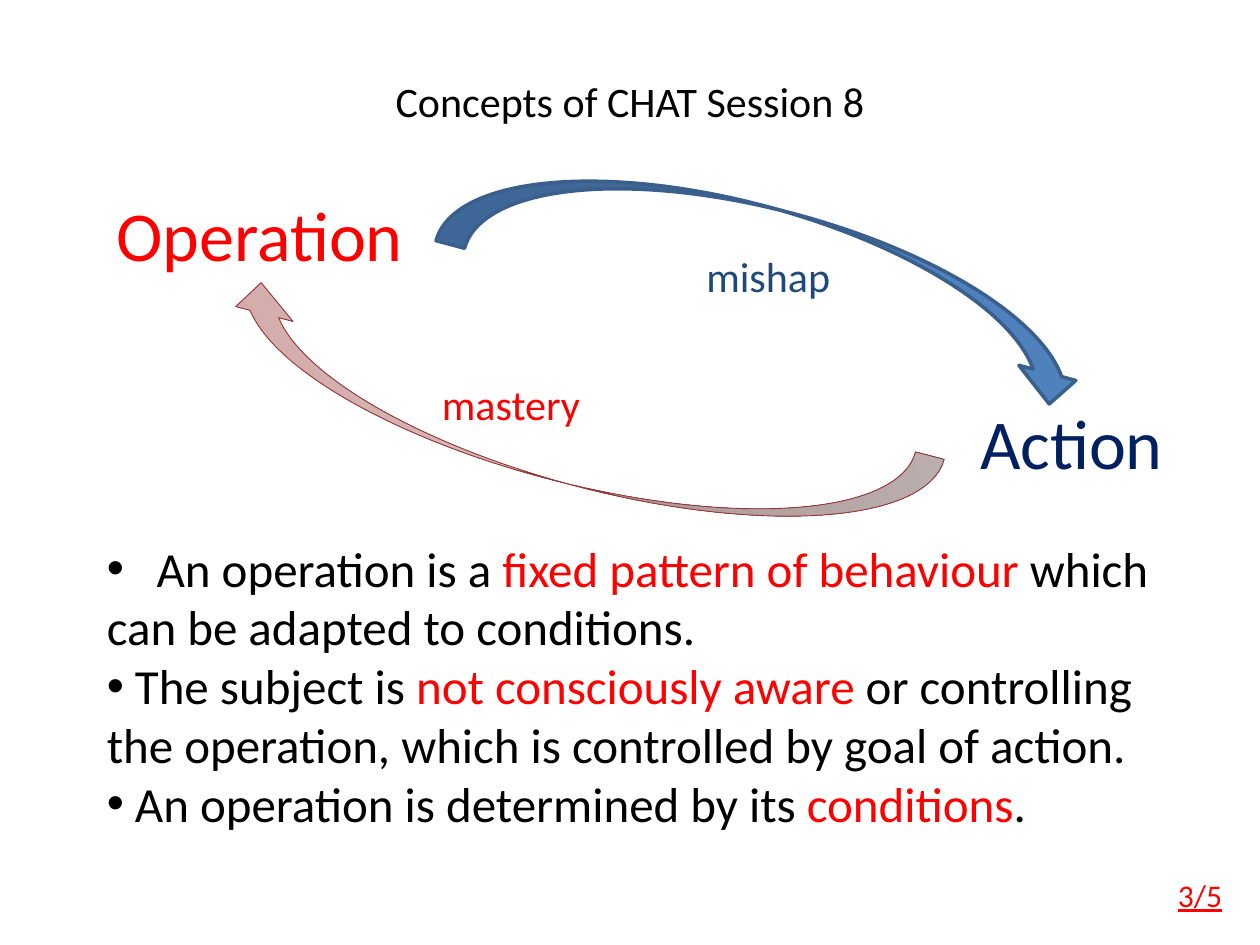
from lxml import etree
from pptx import Presentation
from pptx.dml.color import RGBColor
from pptx.enum.shapes import MSO_SHAPE as Geo
from pptx.enum.text import MSO_ANCHOR as Anchor, MSO_AUTO_SIZE as Auto, PP_ALIGN as Align
from pptx.oxml import parse_xml
from pptx.oxml.ns import nsdecls, qn
from pptx.util import Pt

FONT = "Calibri"
BLACK, RED, NAVY, BLUE = "000000", "FF0000", "002060", "1F497D"

POINTS = [
    [("\tAn operation is a ", BLACK), ("fixed pattern of behaviour", RED),
     (" which can be adapted to conditions.", BLACK)],
    [(" The subject is ", BLACK), ("not consciously aware", RED),
     (" or controlling the operation, which is controlled by goal of action.", BLACK)],
    [(" An operation is determined by its ", BLACK), ("conditions", RED), (".", BLACK)],
]


def color(code):
    return RGBColor.from_string(code)


def add_run(para, text, size, code, under=False):
    run = para.add_run()
    run.text = text
    font = run.font
    font.name, font.size = FONT, Pt(size)
    font.color.rgb = color(code)
    if under:
        font.underline = True


def add_box(slide, box, anchor=Anchor.TOP, grow=False):
    frame = slide.shapes.add_textbox(*map(Pt, box)).text_frame
    frame.word_wrap = True
    frame.vertical_anchor = anchor
    frame.auto_size = Auto.SHAPE_TO_FIT_TEXT if grow else Auto.NONE
    return frame


def add_label(slide, box, text, size, code, align=Align.LEFT, under=False, **opts):
    para = add_box(slide, box, **opts).paragraphs[0]
    para.alignment = align
    add_run(para, text, size, code, under)


def add_bullet(para, tab):
    props = para._p.get_or_add_pPr()
    props.set("marL", "0")
    props.set("indent", "0")
    etree.SubElement(props, qn("a:buFont")).set("typeface", "Arial")
    etree.SubElement(props, qn("a:buChar")).set("char", "•")
    stops = etree.SubElement(props, qn("a:tabLst"))
    stop = etree.SubElement(stops, qn("a:tab"))
    stop.set("pos", str(Pt(tab)))
    stop.set("algn", "l")


def add_list(slide, box, items, size):
    frame = add_box(slide, box, grow=True)
    for i, runs in enumerate(items):
        para = frame.add_paragraph() if i else frame.paragraphs[0]
        add_bullet(para, 28.5)
        for text, code in runs:
            add_run(para, text, size, code)


def add_arrow(slide, box, turn, line, width):
    arrow = slide.shapes.add_shape(Geo.CURVED_LEFT_ARROW, *map(Pt, box))
    arrow.rotation = turn
    arrow.shadow.inherit = False
    arrow.line.color.rgb = color(line)
    arrow.line.width = Pt(width)
    return arrow


def flip(shape):
    frame = shape._element.spPr.find(qn("a:xfrm"))
    frame.set("flipH", "1")
    frame.set("flipV", "1")


def fade(shape, stops, angle):
    marks = "".join(
        f'<a:gs pos="{pos * 1000}"><a:srgbClr val="{code}"/></a:gs>' for pos, code in stops)
    fill = parse_xml(
        f'<a:gradFill {nsdecls("a")} rotWithShape="1"><a:gsLst>{marks}</a:gsLst>'
        f'<a:lin ang="{angle * 60000}" scaled="0"/></a:gradFill>')
    shape._element.spPr.find(qn("a:prstGeom")).addnext(fill)


def main():
    deck = Presentation()
    deck.slide_width, deck.slide_height = Pt(720), Pt(540)
    slide = deck.slides.add_slide(deck.slide_layouts[6])

    # Title and the two concepts
    add_label(slide, (54, 21, 612, 73.5), "Concepts of CHAT Session 8", 24, BLACK,
              Align.CENTER, anchor=Anchor.MIDDLE)
    add_label(slide, (59.5, 106, 209.5, 62.5), "Operation", 40, RED)
    add_label(slide, (507.5, 224.5, 164, 62.5), "Action", 40, NAVY, Align.RIGHT)

    # Explanation
    add_list(slide, (54, 304, 612, 177), POINTS, 28)

    # Cycle of arrows
    down = add_arrow(slide, (407.5, -36, 67.5, 379.5), 284.9, "3A5F8C", 2)
    down.fill.solid()
    down.fill.fore_color.rgb = color("4F81BD")
    back = add_arrow(slide, (294, 32.5, 67.5, 420), 284.5, "953735", 0.5)
    flip(back)
    fade(back, [(0, "CB9A9A"), (50, "DDC2C2"), (100, "EEE2E1")], 225)

    # Arrow labels
    add_label(slide, (388, 139.5, 102, 36), "mishap", 24, BLUE, Align.CENTER, grow=True)
    add_label(slide, (241, 213, 102, 36), "mastery", 24, RED, Align.CENTER, grow=True)

    # Page count
    add_label(slide, (666, 497, 40, 29), "3/5", 18, RED, under=True, grow=True)

    deck.save("out.pptx")


if __name__ == "__main__":
    main()
